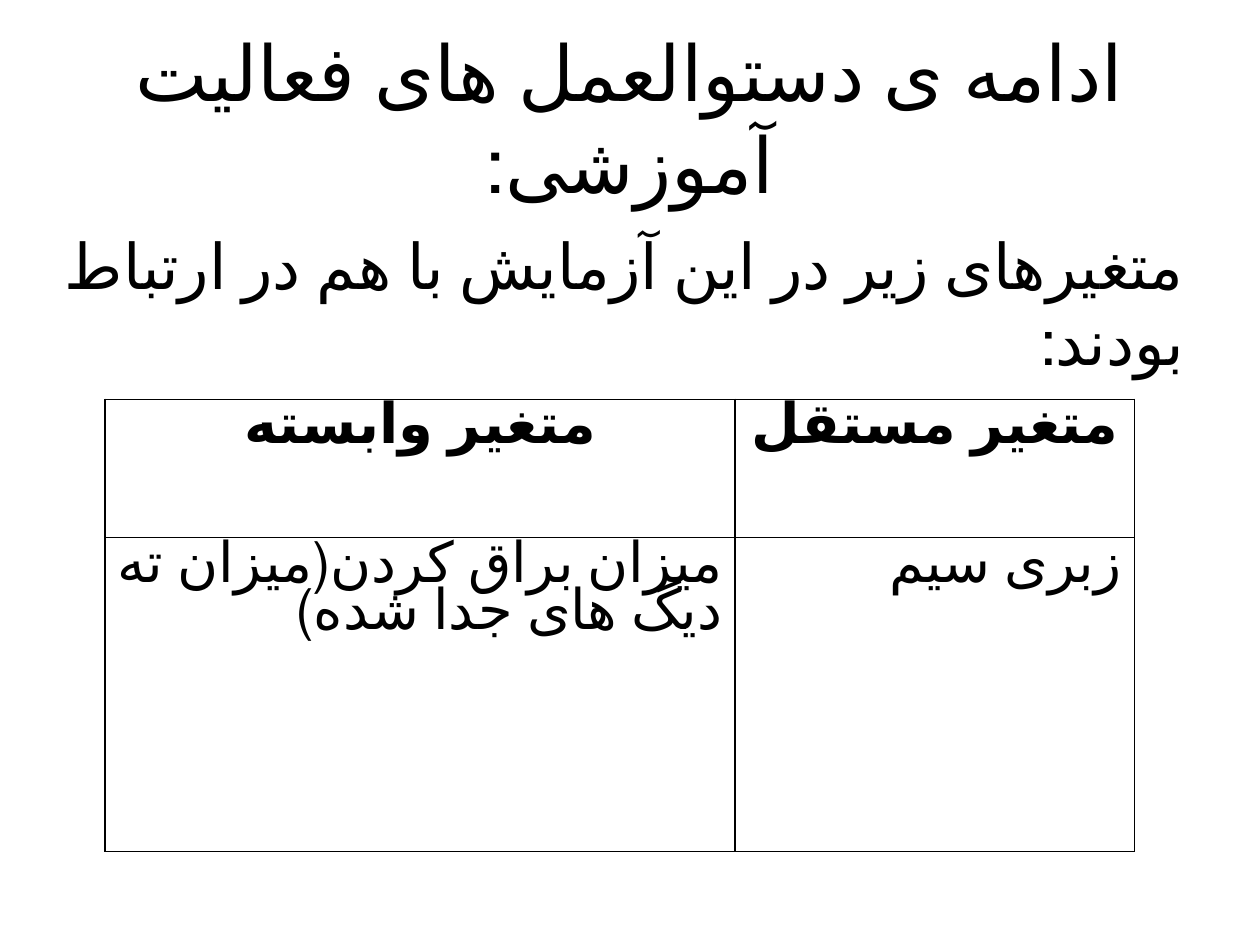
from lxml import etree
from pptx import Presentation, util as u
from pptx.dml.color import RGBColor
from pptx.enum import text
from pptx.oxml import ns

COLORS = {"ink": "000000", "paper": "FFFFFF"}
FONT = "Calibri"
TITLE = "ادامه ی دستوالعمل های فعالیت آموزشی:"
INTRO = "متغیرهای زیر در این آزمایش با هم در ارتباط بودند:"
VARIABLES = [
    ["متغیر وابسته", "متغیر مستقل"],
    ["میزان براق کردن(میزان ته دیگ های جدا شده)", "زبری سیم"],
]
CENTER, RIGHT = text.PP_ALIGN.CENTER, text.PP_ALIGN.RIGHT


def write_persian(frame, words, size, align, bold=False, spacing=None):
    para = frame.paragraphs[0]
    for name, value in {"alignment": align, "line_spacing": spacing}.items():
        setattr(para, name, value)
    para._p.get_or_add_pPr().set("rtl", "1")
    span = para.add_run()
    span.text = words
    for name, value in {"name": FONT, "size": u.Pt(size), "bold": bold}.items():
        setattr(span.font, name, value)
    span.font.color.rgb = RGBColor.from_string(COLORS["ink"])
    span._r.get_or_add_rPr().set("lang", "fa-IR")


def add_text(page, box, words, size, align, anchor):
    frame = page.shapes.add_textbox(*box).text_frame
    for name, value in {"word_wrap": True, "vertical_anchor": anchor}.items():
        setattr(frame, name, value)
    write_persian(frame, words, size, align)


def border_cell(cell):
    properties = cell._tc.get_or_add_tcPr()
    for position, side in enumerate(("lnL", "lnR", "lnT", "lnB")):
        line = etree.Element(ns.qn(f"a:{side}"), w=str(u.Pt(1)))
        fill = etree.SubElement(line, ns.qn("a:solidFill"))
        etree.SubElement(fill, ns.qn("a:srgbClr"), val=COLORS["ink"])
        properties.insert(position, line)


def add_variables(page, box, widths, heights):
    table = page.shapes.add_table(len(heights), len(widths), *box).table
    for name in ("first_row", "horz_banding"):
        setattr(table, name, False)
    for column, width in zip(table.columns, widths):
        column.width = width
    for row, height in zip(table.rows, heights):
        row.height = height
    for row_index, words_in_row in enumerate(VARIABLES):
        header = row_index == 0
        for column_index, words in enumerate(words_in_row):
            cell = table.cell(row_index, column_index)
            cell.fill.solid()
            cell.fill.fore_color.rgb = RGBColor.from_string(COLORS["paper"])
            border_cell(cell)
            write_persian(cell.text_frame, words, 32, CENTER if header else RIGHT,
                          bold=header, spacing=0.85)


def main():
    deck = Presentation()
    deck.slide_width, deck.slide_height = u.Cm(25.4), u.Cm(19.05)
    page = deck.slides.add_slide(deck.slide_layouts[6])
    title_box = [u.Cm(n) for n in (1.27, 0.76, 22.86, 3.18)]
    intro_box = [u.Cm(n) for n in (0.53, 4.45, 23.6, 14.17)]
    table_box = [u.Cm(n) for n in (2.12, 8.05, 20.75, 9.12)]
    add_text(page, title_box, TITLE, 44, CENTER, text.MSO_ANCHOR.MIDDLE)
    add_text(page, intro_box, INTRO, 36, RIGHT, text.MSO_ANCHOR.TOP)
    add_variables(page, table_box, [u.Cm(12.7), u.Cm(8.05)], [u.Cm(2.79), u.Cm(6.33)])
    deck.save("out.pptx")


if __name__ == "__main__":
    main()
